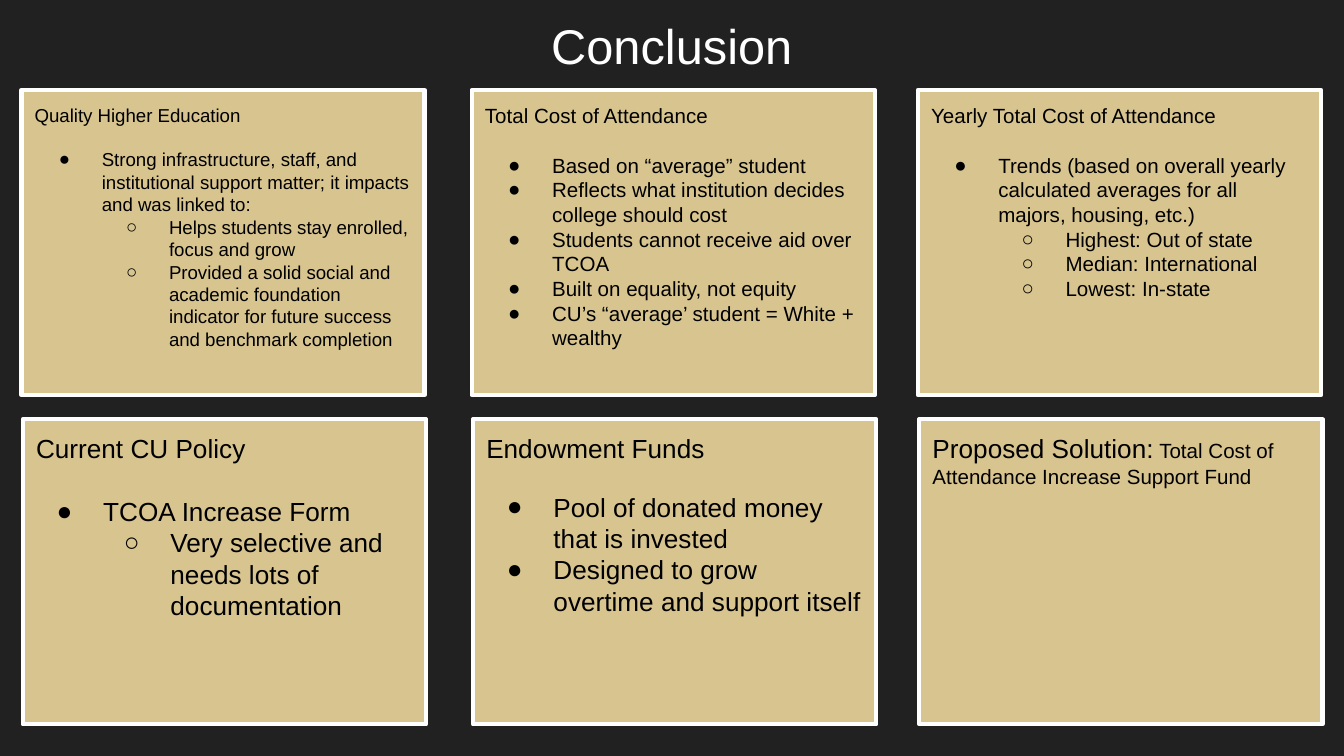
from dataclasses import dataclass

from lxml.etree import SubElement
from pptx import Presentation
from pptx.dml.color import RGBColor
from pptx.enum.shapes import MSO_SHAPE as Shape
from pptx.enum.text import MSO_ANCHOR as Anchor, PP_ALIGN as Align
from pptx.oxml.ns import qn
from pptx.util import Inches, Pt


@dataclass(frozen=True)
class Theme:
    font: str = "Arial"
    background: str = "212121"
    card: str = "D7C48F"
    border: str = "FFFFFF"
    title: str = "FFFFFF"
    text: str = "000000"
    title_size: float = 26.1
    large: int = 14
    gap: int = 12
    medium: int = 11
    small: int = 10
    border_width: float = 2.25
    bullets: tuple = ("●", "○")


@dataclass(frozen=True)
class Grid:
    lefts: tuple = (0.16, 3.51, 6.83)
    top: float = 0.67
    row_step: float = 2.45
    row_shift: float = 0.01
    width: float = 3
    height: float = 2.27

    def cell(self, column, row):
        left = self.lefts[column] + row * self.row_shift
        top = self.top + row * self.row_step
        return [Inches(v) for v in (left, top, self.width, self.height)]


class SlideBuilder:
    def __init__(self, presentation, theme, grid):
        self.theme = theme
        self.grid = grid
        self.slide = presentation.slides.add_slide(presentation.slide_layouts[6])
        self.slide_width = presentation.slide_width
        fill = self.slide.background.fill
        fill.solid()
        fill.fore_color.rgb = RGBColor.from_string(theme.background)

    def style(self, font, size, color):
        font.name = self.theme.font
        font.size = Pt(size)
        font.color.rgb = RGBColor.from_string(color)

    def prepare(self, frame, anchor):
        frame.word_wrap = True
        frame.vertical_anchor = anchor
        frame.margin_left = frame.margin_right = Inches(0.1)
        frame.margin_top = frame.margin_bottom = Inches(0.1)

    def title(self, text):
        box = self.slide.shapes.add_textbox(0, 0, self.slide_width, Inches(self.grid.top))
        self.prepare(box.text_frame, Anchor.MIDDLE)
        paragraph = box.text_frame.paragraphs[0]
        paragraph.text = text
        paragraph.alignment = Align.CENTER
        self.style(paragraph.font, self.theme.title_size, self.theme.title)

    def bullet(self, frame, level, text, size):
        paragraph = frame.add_paragraph()
        paragraph.text = text
        paragraph.level = level
        paragraph.alignment = Align.LEFT
        properties = paragraph._p.get_or_add_pPr()
        properties.set("marL", str(Inches(0.5 * (level + 1))))
        properties.set("indent", str(-Inches(0.25) - Pt(size / 2)))
        color = SubElement(properties, qn("a:buClr"))
        SubElement(color, qn("a:srgbClr"), val=self.theme.text)
        SubElement(properties, qn("a:buFont"), typeface=self.theme.font)
        SubElement(properties, qn("a:buChar"), char=self.theme.bullets[level])
        self.style(paragraph.font, size, self.theme.text)

    def card(self, column, row, heading, size, bullets=(), gap=None, detail=None):
        theme = self.theme
        shape = self.slide.shapes.add_shape(Shape.RECTANGLE, *self.grid.cell(column, row))
        shape.shadow.inherit = False
        shape.fill.solid()
        shape.fill.fore_color.rgb = RGBColor.from_string(theme.card)
        shape.line.color.rgb = RGBColor.from_string(theme.border)
        shape.line.width = Pt(theme.border_width)
        frame = shape.text_frame
        self.prepare(frame, Anchor.TOP)
        paragraph = frame.paragraphs[0]
        paragraph.text = heading
        paragraph.alignment = Align.LEFT
        self.style(paragraph.font, size, theme.text)
        if detail:
            run = paragraph.add_run()
            run.text = detail
            run.font.size = Pt(theme.medium)
        if bullets:
            paragraph.space_after = Pt(round(1.2 * (gap or size), 1))
        for level, text in bullets:
            self.bullet(frame, level, text, size)


def main():
    presentation = Presentation()
    presentation.slide_width = Inches(10)
    presentation.slide_height = Inches(10) * 9 // 16
    theme = Theme()
    builder = SlideBuilder(presentation, theme, Grid())

    builder.title("Conclusion")
    builder.card(0, 1, "Current CU Policy", theme.large, [
        (0, "TCOA Increase Form"),
        (1, "Very selective and needs lots of documentation"),
    ])
    builder.card(1, 1, "Endowment Funds", theme.large, [
        (0, "Pool of donated money that is invested"),
        (0, "Designed to grow overtime and support itself"),
    ], gap=theme.gap)
    builder.card(2, 1, "Proposed Solution:", theme.large,
                 detail=" Total Cost of Attendance Increase Support Fund")
    builder.card(0, 0, "Quality Higher Education", theme.small, [
        (0, "Strong infrastructure, staff, and institutional support matter; "
            "it impacts and was linked to:"),
        (1, "Helps students stay enrolled, focus and grow"),
        (1, "Provided a solid social and academic foundation indicator for "
            "future success and benchmark completion"),
    ])
    builder.card(1, 0, "Total Cost of Attendance", theme.medium, [
        (0, "Based on “average” student"),
        (0, "Reflects what institution decides college should cost"),
        (0, "Students cannot receive aid over TCOA"),
        (0, "Built on equality, not equity"),
        (0, "CU’s “average’ student = White + wealthy"),
    ])
    builder.card(2, 0, "Yearly Total Cost of Attendance", theme.medium, [
        (0, "Trends (based on overall yearly calculated averages for all "
            "majors, housing, etc.)"),
        (1, "Highest: Out of state"),
        (1, "Median: International"),
        (1, "Lowest: In-state"),
    ])
    presentation.save("out.pptx")


if __name__ == "__main__":
    main()
